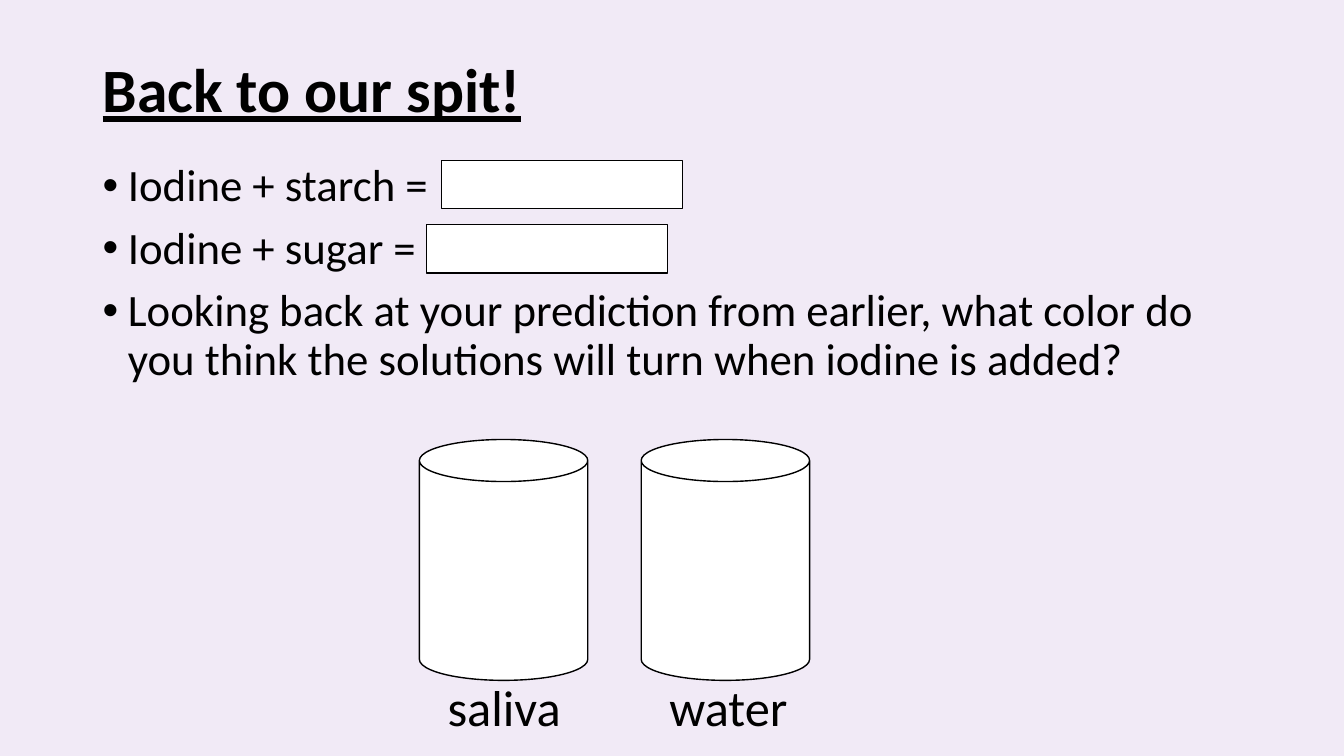
import pptx
import pptx.util
import pptx.dml.color
import pptx.enum.shapes
import pptx.enum.text
from lxml import etree

Inches = pptx.util.Inches
Pt = pptx.util.Pt
SHAPES = pptx.enum.shapes.MSO_SHAPE

COLORS = {"background": "F1EAF6", "ink": "000000", "paper": "FFFFFF"}
FONT = "Calibri"
TITLE = "Back to our spit!"
BULLETS = [
    "Iodine + starch =",
    "Iodine + sugar =",
    "Looking back at your prediction from earlier, what color do you think "
    "the solutions will turn when iodine is added?",
]
BEAKERS = ["saliva", "water"]
ANSWER_BOXES = [(4.38, 1.59), (4.23, 2.23)]
BEAKER_LEFT, BEAKER_STEP = 4.16, 2.2
LABEL_OFFSET = 0.18


def color(name):
    return pptx.dml.color.RGBColor.from_string(COLORS[name])


def add_text(page, place, lines, size, bold=False):
    box = page.shapes.add_textbox(*map(Inches, place))
    frame = box.text_frame
    frame.word_wrap = True
    frame.text = "\n".join(lines)
    for para in frame.paragraphs:
        for span in para.runs:
            span.font.name = FONT
            span.font.size = Pt(size)
            span.font.bold = bold
            span.font.underline = bold
            span.font.color.rgb = color("ink")
    return frame


def add_outlined(page, kind, place):
    shape = page.shapes.add_shape(kind, *map(Inches, place))
    shape.shadow.inherit = False
    shape.fill.solid()
    shape.fill.fore_color.rgb = color("paper")
    shape.line.color.rgb = color("ink")
    shape.line.width = Pt(1)


def add_bullet(para):
    para.line_spacing = 0.9
    para.space_before = Pt(10)
    properties = para._p.get_or_add_pPr()
    properties.set("marL", str(Inches(0.25)))
    properties.set("indent", str(-Inches(0.25)))
    namespace = pptx.oxml.ns.nsuri("a")
    font = etree.SubElement(properties, f"{{{namespace}}}buFont")
    font.set("typeface", "Arial")
    bullet = etree.SubElement(properties, f"{{{namespace}}}buChar")
    bullet.set("char", "•")


def main():
    """Build the iodine prediction slide."""
    deck = pptx.Presentation()
    deck.slide_width, deck.slide_height = Inches(13.33), Inches(7.5)
    page = deck.slides.add_slide(deck.slide_layouts[6])
    page.background.fill.solid()
    page.background.fill.fore_color.rgb = color("background")

    title = add_text(page, (0.92, 0.4, 11.5, 1.04), [TITLE], 44, bold=True)
    title.vertical_anchor = pptx.enum.text.MSO_ANCHOR.MIDDLE
    title.paragraphs[0].line_spacing = 0.9

    body = add_text(page, (0.92, 1.57, 11.5, 5.18), BULLETS, 32)
    for para in body.paragraphs:
        add_bullet(para)

    for index, label in enumerate(BEAKERS):
        left = BEAKER_LEFT + index * BEAKER_STEP
        add_outlined(page, SHAPES.CAN, (left, 4.36, 1.67, 2.39))
        add_text(page, (left + LABEL_OFFSET, 6.66, 1.48, 0.71), [label], 36)

    for left, top in ANSWER_BOXES:
        add_outlined(page, SHAPES.RECTANGLE, (left, top, 2.39, 0.48))

    deck.save("out.pptx")


if __name__ == "__main__":
    main()
